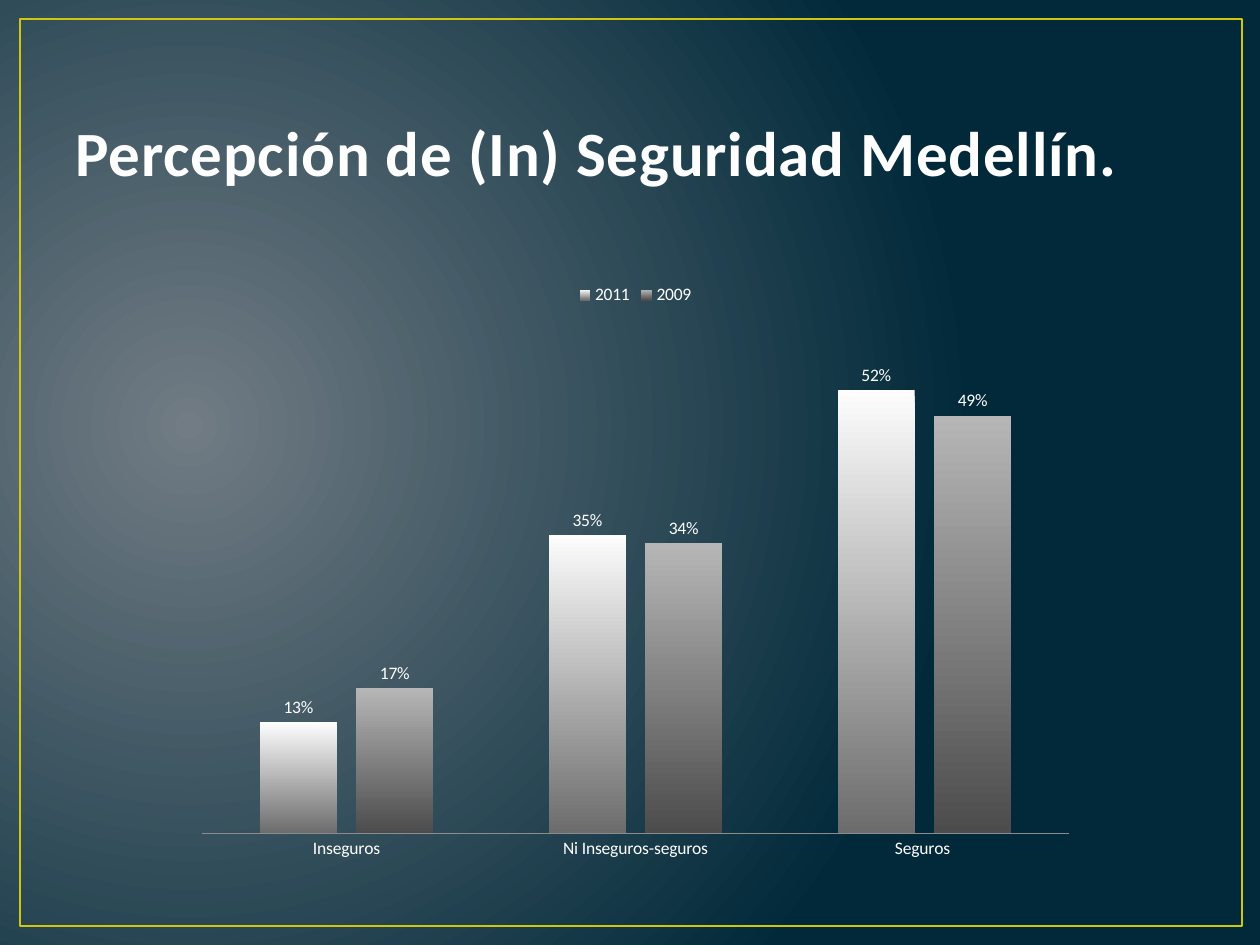
"""Build a slide with a clustered column chart on safety perception."""
from dataclasses import dataclass

import lxml.etree
import pptx
import pptx.chart.data
import pptx.dml.color
import pptx.enum.chart
import pptx.enum.shapes
import pptx.enum.text
import pptx.oxml
import pptx.oxml.ns
import pptx.util

RGB = pptx.dml.color.RGBColor
MIST = RGB(0x71, 0x7C, 0x84)
NAVY = RGB(0x01, 0x29, 0x3A)
GOLD = RGB(0xCF, 0xC6, 0x0D)
SLATE = RGB(0x38, 0x4F, 0x55)
IVORY = RGB(0xFE, 0xFE, 0xFE)
WHITE = RGB(0xFF, 0xFF, 0xFF)
GREY = RGB(0x8C, 0x8C, 0x8C)
FONT = "Calibri"
SCALE = 914400 / 126
NS = pptx.oxml.ns.nsdecls("a")


@dataclass
class Box:
    left: int
    top: int
    width: int
    height: int

    def emu(self) -> list[int]:
        return [px(n) for n in (self.left, self.top, self.width, self.height)]


@dataclass
class Series:
    name: str
    vals: tuple[float, ...]
    light: RGB
    dark: RGB


CATS = ("Inseguros", "Ni Inseguros-seguros", "Seguros ")
YEARS = (
    Series("2011", (0.13, 0.35, 0.52), RGB(0xFD, 0xFD, 0xFD), RGB(0x6C, 0x6C, 0x6C)),
    Series("2009", (0.17, 0.34, 0.49), RGB(0xB6, 0xB6, 0xB6), RGB(0x4C, 0x4C, 0x4C)),
)


def px(count: int) -> int:
    return round(count * SCALE)


def shade(fill, first: RGB, last: RGB) -> None:
    fill.gradient()
    for stop, color in zip(fill.gradient_stops, (first, last)):
        stop.color.rgb = color
    fill.gradient_stops[0].position = 0
    fill.gradient_stops[1].position = 1


def paint(slide) -> None:
    fill = slide.background.fill
    shade(fill, MIST, NAVY)
    grad = slide.element.find(".//" + pptx.oxml.ns.qn("a:gradFill"))
    line = grad.find(pptx.oxml.ns.qn("a:lin"))
    glow = pptx.oxml.parse_xml(
        f'<a:path {NS} path="circle">'
        '<a:fillToRect l="15000" t="50000" r="85000" b="60000"/></a:path>')
    grad.replace(line, glow)


def frame(slide, box: Box) -> None:
    shape = slide.shapes.add_shape(
        pptx.enum.shapes.MSO_SHAPE.RECTANGLE, *box.emu())
    shape.shadow.inherit = False
    shape.fill.background()
    shape.line.color.rgb = GOLD
    shape.line.width = pptx.util.Pt(1.5)


def title(slide, box: Box, text: str) -> None:
    body = slide.shapes.add_textbox(*box.emu()).text_frame
    body.word_wrap = True
    body.vertical_anchor = pptx.enum.text.MSO_ANCHOR.BOTTOM
    run = body.paragraphs[0].add_run()
    run.text = text
    font = run.font
    font.name, font.size, font.bold = FONT, pptx.util.Pt(36), True
    font.color.rgb = IVORY
    props = run._r.get_or_add_rPr()
    props.set("spc", "50")
    props.insert(0, pptx.oxml.parse_xml(
        f'<a:ln {NS} w="{pptx.util.Pt(1.05)}"><a:solidFill>'
        f'<a:srgbClr val="{SLATE}"/></a:solidFill></a:ln>'))


def graph(slide, box: Box) -> None:
    enum = pptx.enum.chart
    data = pptx.chart.data.CategoryChartData(number_format="0%")
    data.categories = CATS
    for year in YEARS:
        data.add_series(year.name, year.vals)
    chart = slide.shapes.add_chart(
        enum.XL_CHART_TYPE.COLUMN_CLUSTERED, *box.emu(), data).chart
    chart.font.name, chart.font.size = FONT, pptx.util.Pt(10)
    chart.font.color.rgb = WHITE
    chart.has_title = False
    chart.has_legend = True
    chart.legend.position = enum.XL_LEGEND_POSITION.TOP
    chart.legend.include_in_layout = False

    axis = chart.category_axis
    axis.major_tick_mark = enum.XL_TICK_MARK.NONE
    axis.format.line.color.rgb = GREY
    scale = chart.value_axis
    scale.minimum_scale, scale.maximum_scale = 0, 0.6
    scale.has_major_gridlines = False
    scale.visible = False

    plot = chart.plots[0]
    plot.gap_width, plot.overlap = 150, -25
    plot.vary_by_categories = False
    for bars, year in zip(plot.series, YEARS):
        shade(bars.format.fill, year.light, year.dark)
        bars.format.fill.gradient_angle = 270
        tags = bars.data_labels
        tags.show_value = True
        tags.number_format, tags.number_format_is_linked = "0%", False
        tags.position = enum.XL_LABEL_POSITION.OUTSIDE_END


def main() -> None:
    deck = pptx.Presentation()
    deck.slide_width, deck.slide_height = px(1260), px(945)
    slide = deck.slides.add_slide(deck.slide_layouts[6])
    paint(slide)
    frame(slide, Box(20, 19, 1222, 907))
    title(slide, Box(63, 38, 1134, 157), "Percepción de (In) Seguridad Medellín.")
    graph(slide, Box(184, 271, 903, 599))
    deck.save("out.pptx")


if __name__ == "__main__":
    main()
